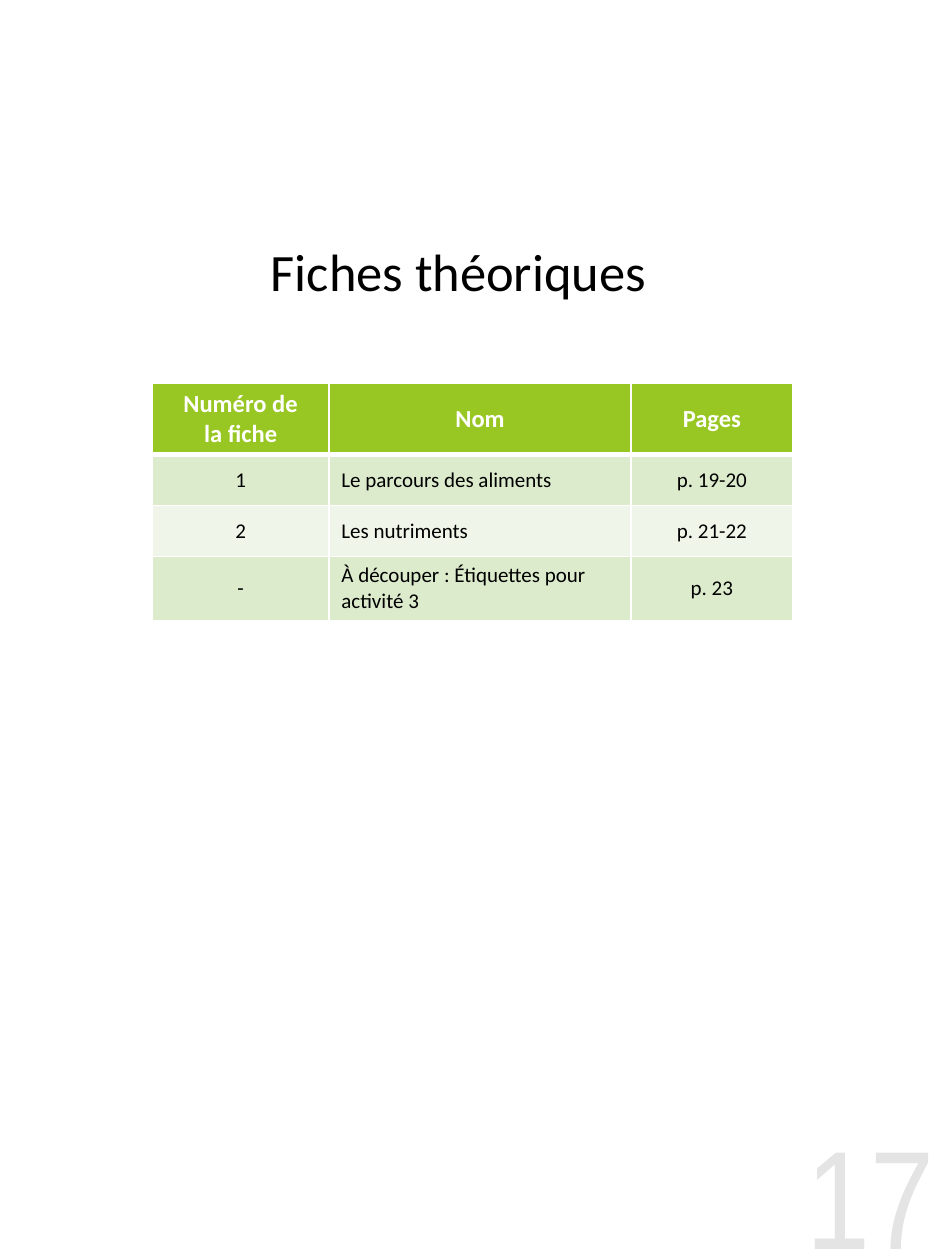
from pptx import Presentation
from pptx.dml.color import RGBColor as RGB
from pptx.enum.text import MSO_ANCHOR as Anchor, PP_ALIGN as Align
from pptx.oxml.ns import qn
from pptx.util import Pt
from lxml.etree import SubElement as Sub

BLACK = RGB(0x00, 0x00, 0x00)
WHITE = RGB(0xFF, 0xFF, 0xFF)
GREEN = RGB(0x98, 0xC7, 0x23)
PALE = RGB(0xDD, 0xEB, 0xCD)
FAINT = RGB(0xEF, 0xF5, 0xE8)
GREY = RGB(0xE4, 0xE4, 0xE4)

COLS = [100.8, 172.8, 92.2]
HEIGHTS = [40.6, 29.2, 29.2, 36.4]
ROWS = [
    ["Numéro de\nla fiche", "Nom", "Pages"],
    ["1", "Le parcours des aliments", "p. 19-20"],
    ["2", "Les nutriments", "p. 21-22"],
    ["-", "À découper : Étiquettes pour activité 3", "p. 23"],
]


def write(frame, text, align, size, color, bold=False, name="Calibri"):
    frame.text = text
    look = {"size": Pt(size), "bold": bold, "name": name}
    for para in frame.paragraphs:
        para.alignment = align
        for key, value in look.items():
            setattr(para.font, key, value)
        para.font.color.rgb = color


def add_text(slide, box, text, anchor, inset, **look):
    frame = slide.shapes.add_textbox(*map(Pt, box)).text_frame
    form = {"word_wrap": True, "vertical_anchor": anchor}
    for side in ("left", "top", "right", "bottom"):
        form["margin_" + side] = Pt(inset)
    for key, value in form.items():
        setattr(frame, key, value)
    write(frame, text, **look)


def add_edges(cell, widths):
    """Draw white cell borders; widths maps each side to points."""
    props = cell._tc.get_or_add_tcPr()
    for side, width in widths.items():
        line = Sub(props, qn("a:ln" + side), w=str(Pt(width)))
        fill = Sub(line, qn("a:solidFill"))
        Sub(fill, qn("a:srgbClr"), val=str(WHITE))


def add_cell(cell, text, row, col):
    head = row == 0
    edges = {"L": 1, "R": 1, "T": 3 if row == 1 else 1, "B": 3 if head else 1}
    add_edges(cell, edges)
    cell.fill.solid()
    cell.fill.fore_color.rgb = GREEN if head else PALE if row % 2 else FAINT
    cell.vertical_anchor = Anchor.MIDDLE
    write(cell.text_frame, text,
          align=Align.LEFT if col == 1 and not head else Align.CENTER,
          size=14 if head else 12,
          color=WHITE if head else BLACK, bold=head)


def add_grid(slide, left, top):
    size = (left, top, sum(COLS), sum(HEIGHTS))
    table = slide.shapes.add_table(len(ROWS), len(COLS), *map(Pt, size)).table
    for col, width in zip(table.columns, COLS):
        col.width = Pt(width)
    for row, height in zip(table.rows, HEIGHTS):
        row.height = Pt(height)
    for i, row in enumerate(ROWS):
        for j, text in enumerate(row):
            add_cell(table.cell(i, j), text, i, j)


def main():
    deck = Presentation()
    deck.slide_width, deck.slide_height = Pt(540), Pt(720)
    slide = deck.slides.add_slide(deck.slide_layouts[6])
    add_text(slide, (76.3, 120.2, 371.5, 68.4), "Fiches théoriques",
             Anchor.MIDDLE, 3.6, align=Align.CENTER, size=30, color=BLACK)
    add_grid(slide, 87.1, 218.9)
    add_text(slide, (434, 634, 100, 86), "17", Anchor.TOP, 0,
             align=Align.RIGHT, size=80, color=GREY, name="Arial Narrow")
    deck.save("out.pptx")


if __name__ == "__main__":
    main()
